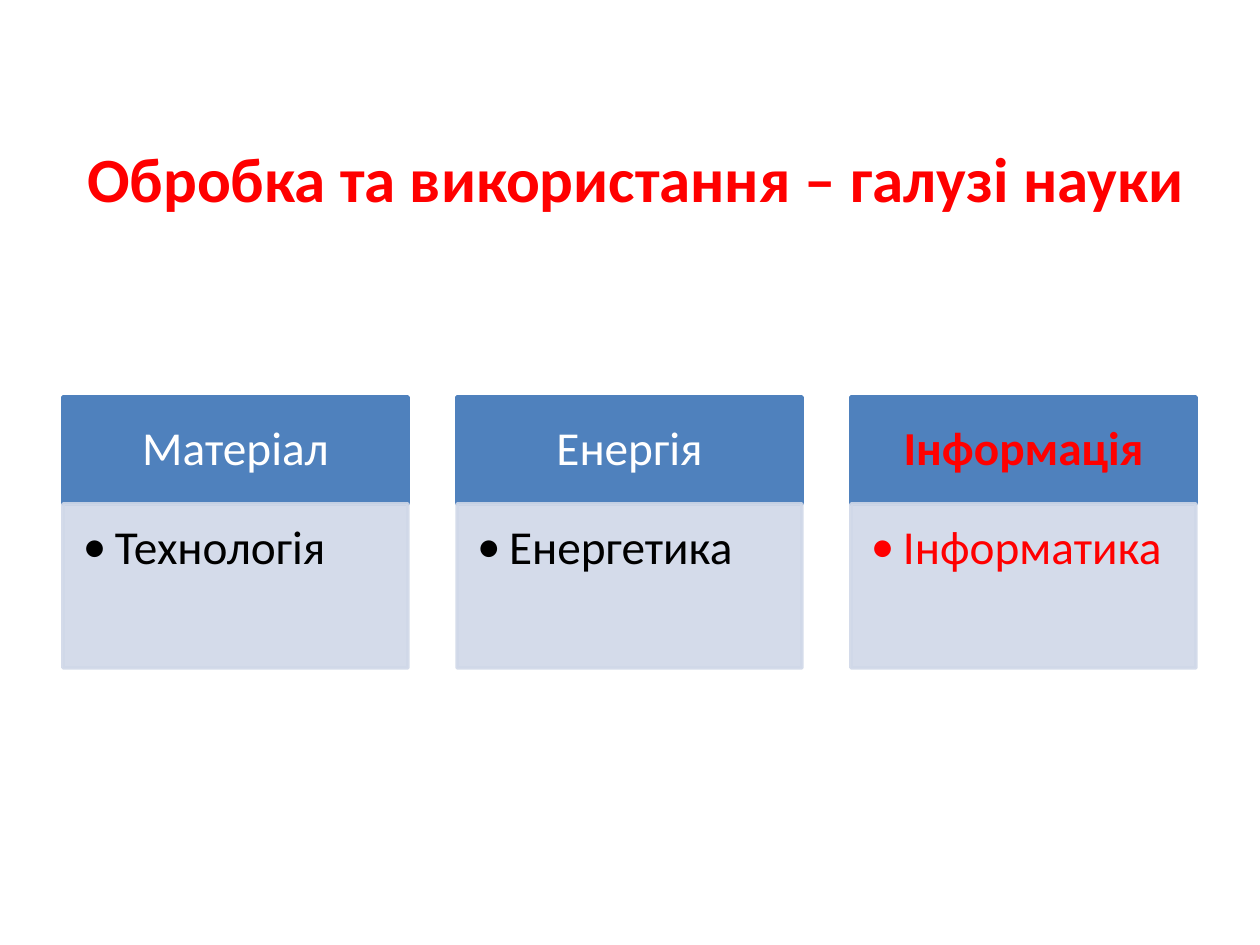
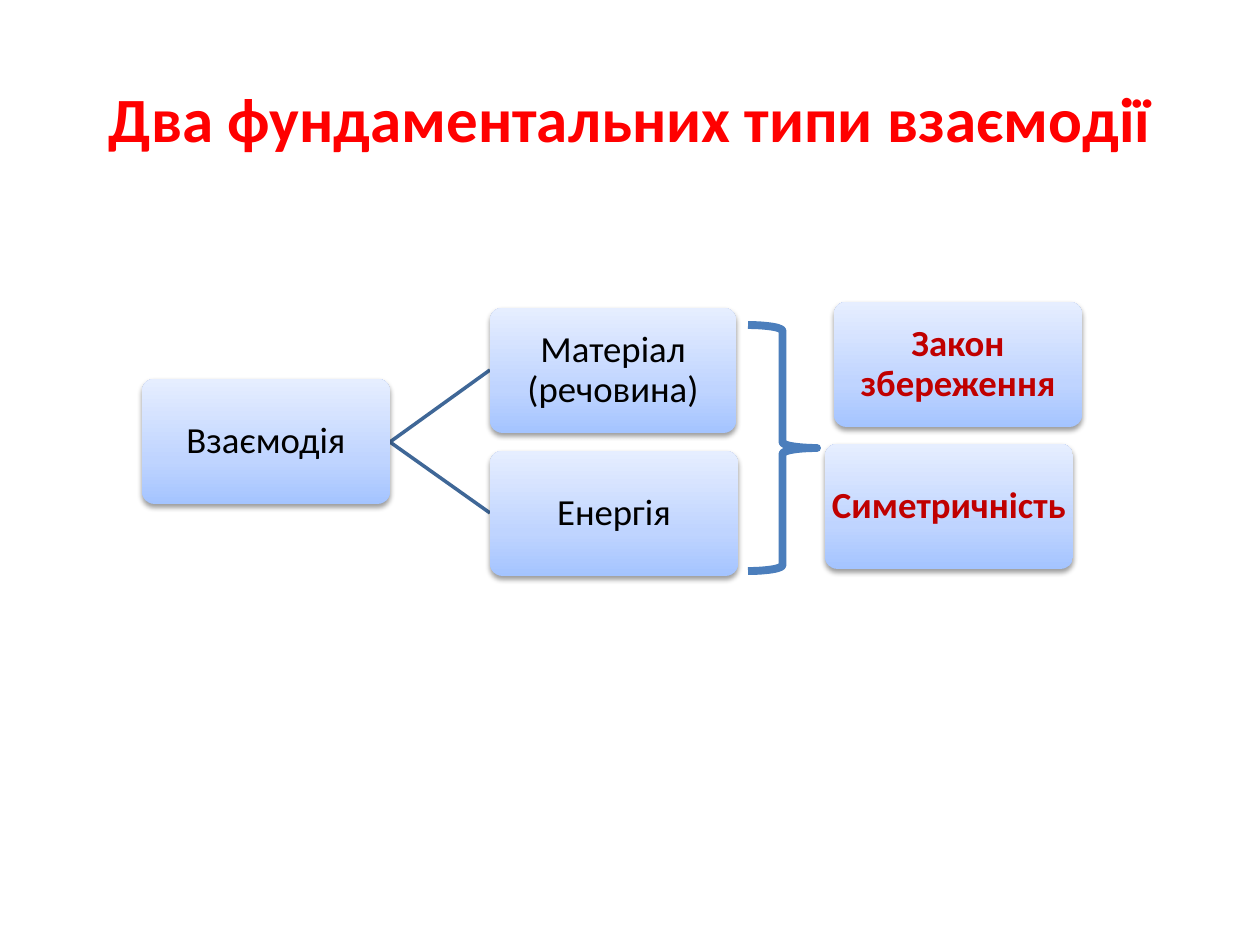
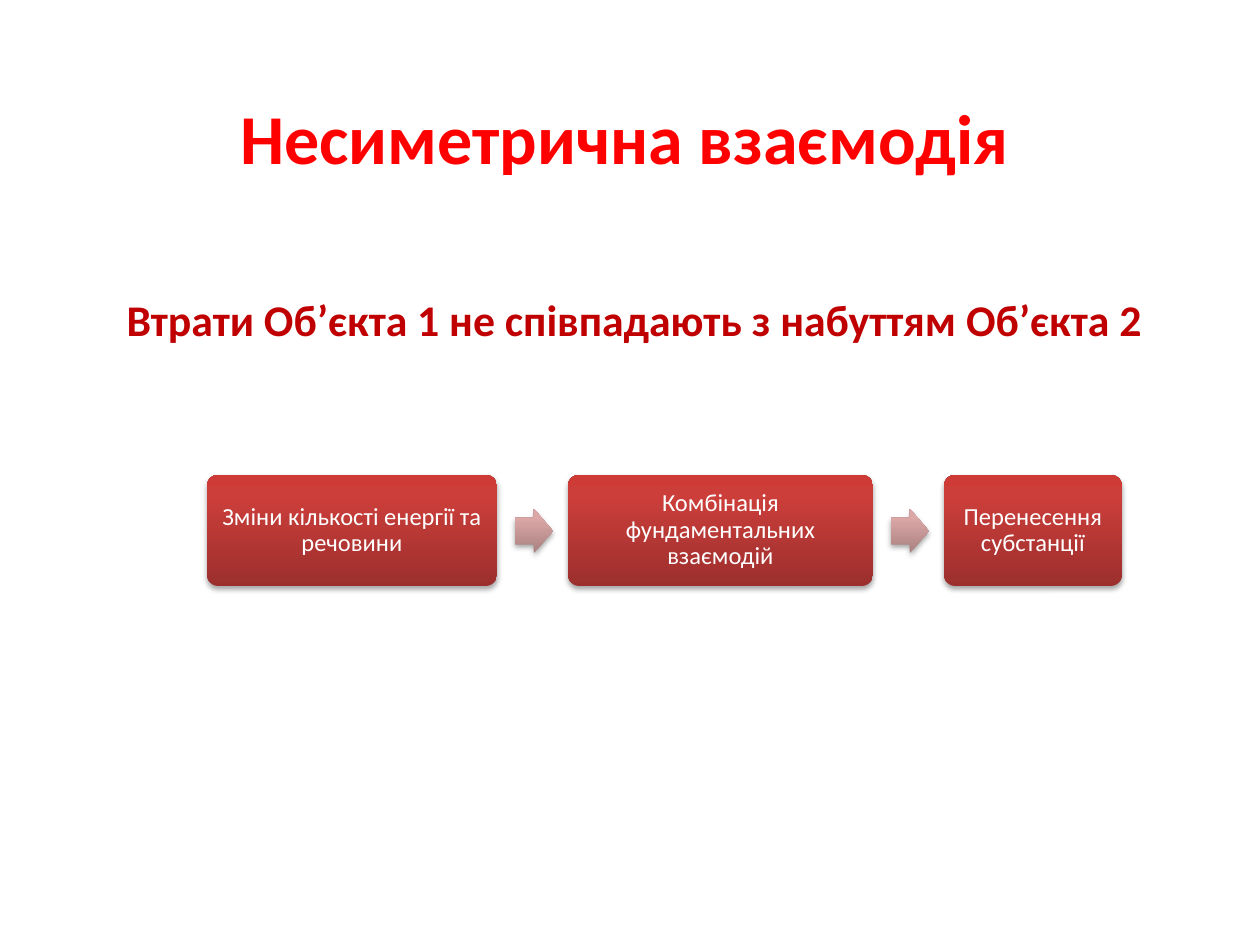
"""Build three slides on matter, energy and information."""
import pptx
import pptx.util
import pptx.dml.color
import pptx.enum.shapes
import pptx.enum.text
import pptx.oxml
import pptx.oxml.ns

Color = pptx.dml.color.RGBColor
Kind = pptx.enum.shapes.MSO_SHAPE
Align = pptx.enum.text.PP_ALIGN
Anchor = pptx.enum.text.MSO_ANCHOR
qn = pptx.oxml.ns.qn
NS = pptx.oxml.ns.nsdecls("a")

PX = 914400 / 126
FONT = "Calibri"
RED = Color(0xFF, 0x00, 0x00)
DARK = Color(0xC0, 0x00, 0x00)
BLACK = Color(0x00, 0x00, 0x00)
WHITE = Color(0xFF, 0xFF, 0xFF)
BLUE = Color(0x4F, 0x81, 0xBD)
PALE = Color(0xD0, 0xD8, 0xE8)
LINK = Color(0x3F, 0x67, 0x97)
BRACE = Color(0x4B, 0x7E, 0xBC)
SKY = [(0, Color(0xA4, 0xC4, 0xFF)), (35, Color(0xBF, 0xD4, 0xFF)), (100, Color(0xE6, 0xEE, 0xFF))]
BRICK = [(0, Color(0x9C, 0x2F, 0x2D)), (80, Color(0xCB, 0x3E, 0x3A)), (100, Color(0xCE, 0x3B, 0x37))]
ROSE = [(0, Color(0xA9, 0x81, 0x80)), (80, Color(0xDB, 0xA7, 0xA7)), (100, Color(0xDD, 0xA7, 0xA6))]


def write(shape, text, size, color, bold=False, pad=(13, 6, 13, 6), space=None):
    frame = shape.text_frame
    frame.word_wrap = True
    frame.vertical_anchor = Anchor.MIDDLE
    frame.margin_left, frame.margin_top, frame.margin_right, frame.margin_bottom = [round(n * PX) for n in pad]
    para = frame.paragraphs[0]
    para.alignment = Align.CENTER
    para.line_spacing = space
    run = para.add_run()
    run.text = text
    run.font.name = FONT
    run.font.size = pptx.util.Pt(size)
    run.font.bold = bold
    run.font.color.rgb = color
    return para


def glow(slide, kind, rect, stops, blur, drop, alpha):
    shape = slide.shapes.add_shape(kind, *[round(n * PX) for n in rect])
    props = shape._element.spPr
    marks = "".join(f'<a:gs pos="{at * 1000}"><a:srgbClr val="{tone}"/></a:gs>' for at, tone in stops)
    props.append(pptx.oxml.parse_xml(
        f'<a:gradFill {NS} rotWithShape="1"><a:gsLst>{marks}</a:gsLst><a:lin ang="16200000" scaled="0"/></a:gradFill>'))
    shape.line.fill.background()
    shape.shadow.inherit = False
    props.find(qn("a:effectLst")).append(pptx.oxml.parse_xml(
        f'<a:outerShdw {NS} blurRad="{pptx.util.Pt(blur)}" dist="{pptx.util.Pt(drop)}" dir="5400000" rotWithShape="0">'
        f'<a:srgbClr val="000000"><a:alpha val="{alpha * 1000}"/></a:srgbClr></a:outerShdw>'))
    return shape


deck = pptx.Presentation()
deck.slide_width = round(1260 * PX)
deck.slide_height = round(945 * PX)
blank = deck.slide_layouts[6]

heads = [
    ("Обробка та використання – галузі науки", 36, (69, 98, 1134, 158)),
    ("Два фундаментальних типи взаємодії", 36, (63, 38, 1134, 158)),
    ("Несиметрична взаємодія", 40, (147, 88, 955, 97)),
]
slides = []
for text, size, rect in heads:
    slide = deck.slides.add_slide(blank)
    title = slide.shapes.add_textbox(*[round(n * PX) for n in rect])
    write(title, text, size, RED, True)
    slides.append(slide)
fields, types, losses = slides

columns = [
    ("Матеріал", WHITE, False, "Технологія", BLACK),
    ("Енергія", WHITE, False, "Енергетика", BLACK),
    ("Інформація", RED, True, "Інформатика", RED),
]
for i, (name, tint, bold, field, ink) in enumerate(columns):
    for top, high, tone in [(397, 107, BLUE), (504, 164, PALE)]:
        rect = (63 + 394 * i, top, 345, high)
        cell = fields.shapes.add_shape(Kind.RECTANGLE, *[round(n * PX) for n in rect])
        cell.shadow.inherit = False
        cell.fill.solid()
        cell.fill.fore_color.rgb = tone
        cell.line.color.rgb = tone
        cell.line.width = pptx.util.Pt(2)
        if tone == BLUE:
            write(cell, name, 27, tint, bold, (26, 15, 26, 15), 0.9)
            continue
        for paint in cell._element.spPr.iter(qn("a:srgbClr")):
            paint.append(pptx.oxml.parse_xml(f'<a:alpha {NS} val="90000"/>'))
        para = write(cell, field, 27, ink, False, (20, 20, 26, 30), 0.9)
        cell.text_frame.vertical_anchor = Anchor.TOP
        para.alignment = Align.LEFT
        props = para._p.get_or_add_pPr()
        props.set("marL", str(round(32 * PX)))
        props.set("indent", str(round(-32 * PX)))
        props.append(pptx.oxml.parse_xml(f'<a:buFont {NS} typeface="{FONT}"/>'))
        props.append(pptx.oxml.parse_xml(f'<a:buChar {NS} char="•"/>'))

for end in (370, 513):
    link = types.shapes.add_connector(
        pptx.enum.shapes.MSO_CONNECTOR.STRAIGHT, *[round(n * PX) for n in (390, 442, 490, end)])
    link.line.color.rgb = LINK
    link.line.width = pptx.util.Pt(2)
    link._element.spPr.append(pptx.oxml.parse_xml(f"<a:effectLst {NS}/>"))

nodes = [
    ("Взаємодія", 142, 379, 248, BLACK, False),
    ("Матеріал (речовина)", 490, 308, 246, BLACK, False),
    ("Закон збереження", 834, 302, 248, DARK, True),
    ("Енергія", 490, 451, 248, BLACK, False),
    ("Симетричність", 825, 444, 248, DARK, True),
]
for text, left, top, wide, ink, bold in nodes:
    node = glow(types, Kind.ROUNDED_RECTANGLE, (left, top, wide, 125), SKY, 3.1, 1.6, 38)
    node.adjustments[0] = 0.1
    write(node, text, 21, ink, bold, (0, 0, 0, 0), 0.9)

brace = types.shapes.add_shape(Kind.RIGHT_BRACE, *[round(n * PX) for n in (748, 325, 69, 246)])
brace.shadow.inherit = False
brace.fill.background()
brace.line.color.rgb = BRACE
brace.line.width = pptx.util.Pt(4.5)

note = losses.shapes.add_textbox(*[round(n * PX) for n in (88, 286, 1092, 66)])
write(note, "Втрати Об’єкта 1 не співпадають з набуттям Об’єкта 2", 25, DARK, True)

steps = [
    ("Зміни кількості енергії та речовини", 290),
    ("Комбінація фундаментальних взаємодій", 305),
    ("Перенесення субстанції", 178),
]
left = 207
for i, (text, wide) in enumerate(steps):
    if i:
        arrow = glow(losses, Kind.RIGHT_ARROW, (left - 53, 509, 38, 44), ROSE, 3.1, 1.8, 35)
        arrow.adjustments[0] = 0.6
        arrow.adjustments[1] = 0.5
    step = glow(losses, Kind.ROUNDED_RECTANGLE, (left, 475, wide, 111), BRICK, 3.1, 1.8, 35)
    step.adjustments[0] = 0.1
    write(step, text, 14, WHITE, False, (11, 11, 11, 11), 0.9)
    left += wide + 71

deck.save("out.pptx")
